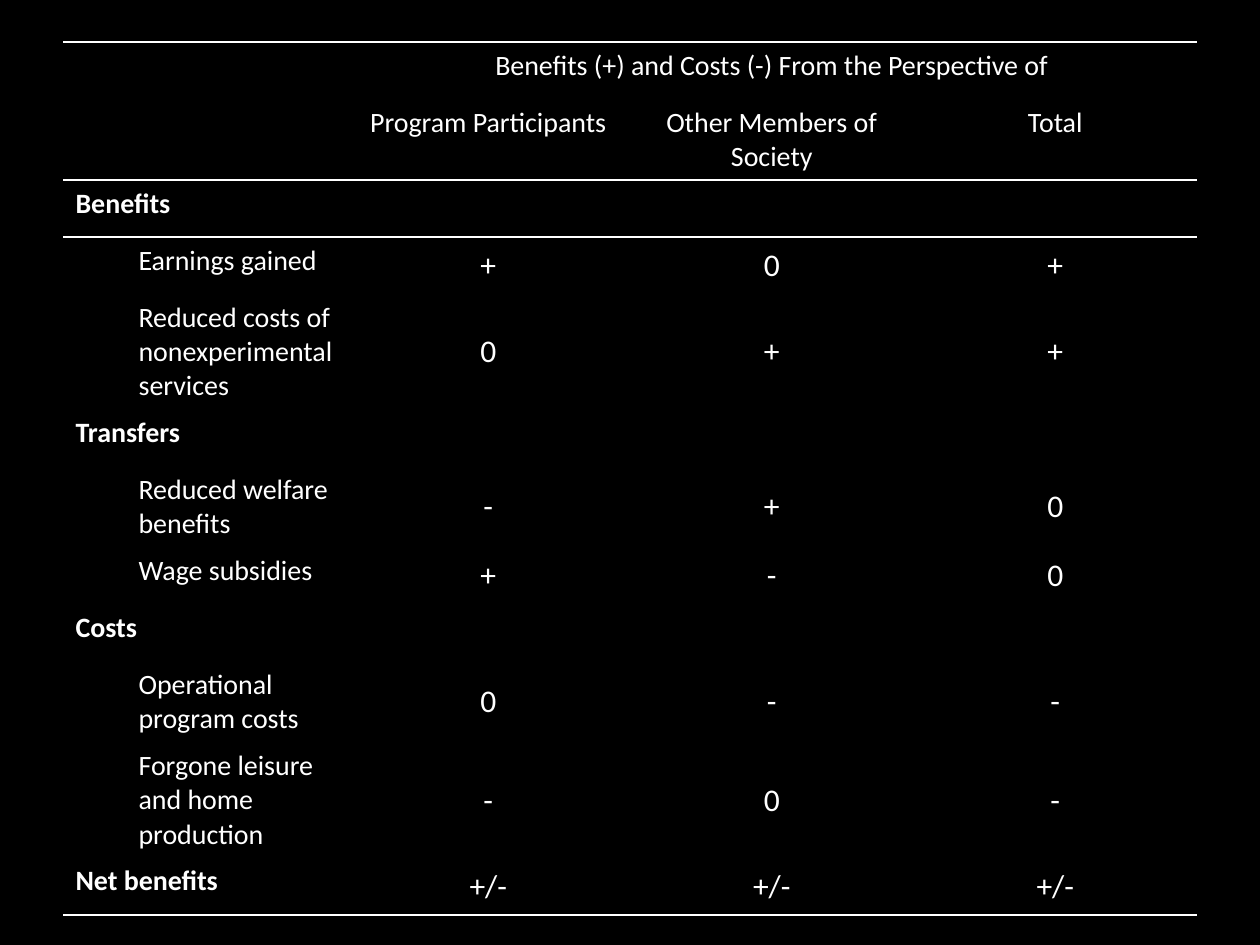
from lxml.etree import SubElement
from pptx import Presentation
from pptx.dml.color import RGBColor
from pptx.enum.text import MSO_ANCHOR, PP_ALIGN
from pptx.oxml import parse_xml
from pptx.oxml.ns import nsdecls
from pptx.util import Pt

COLORS = {"background": "000000", "ink": "FFFFFF"}
FONT = "Calibri"
PX_PER_INCH = 126
NO_STYLE_NO_GRID = "{2D5ABB26-0587-4C30-8999-92F81FD0307C}"

COLUMN_WIDTH = 283.5
ROW_HEIGHTS = [57, 78, 57, 57, 112, 57, 78, 57, 57, 78, 78, 57]
INDENT = 63

PERSPECTIVES = ["Program Participants", "Other Members of Society", "Total"]
# Label, then one sign per perspective; a section heading has no signs
ROWS = [
    ("Benefits", ""),
    ("Earnings gained", "+ 0 +"),
    ("Reduced costs of nonexperimental services", "0 + +"),
    ("Transfers", ""),
    ("Reduced welfare benefits", "- + 0"),
    ("Wage subsidies", "+ - 0"),
    ("Costs", ""),
    ("Operational program costs", "0 - -"),
    ("Forgone leisure and home production", "- 0 -"),
    ("Net benefits", "+/- +/- +/-"),
]
BOLD_LABELS = {"Benefits", "Transfers", "Costs", "Net benefits"}


def px(length):
    return round(length * 914400 / PX_PER_INCH)


def write_cell(cell, text, size=16, bold=False, align=PP_ALIGN.CENTER):
    cell.text_frame.text = text
    paragraph = cell.text_frame.paragraphs[0]
    paragraph.alignment = align
    font = paragraph.runs[0].font
    font.name, font.size, font.bold = FONT, Pt(size), bold
    font.color.rgb = RGBColor.from_string(COLORS["ink"])


def write_label(cell, text):
    bold = text in BOLD_LABELS
    write_cell(cell, text, bold=bold, align=PP_ALIGN.LEFT)
    if not bold:
        paragraph = cell.text_frame.paragraphs[0]
        paragraph.level = 1
        properties = paragraph._p.get_or_add_pPr()
        properties.set("marL", str(px(INDENT)))
        properties.set("indent", "0")


def rule_row(table, row, side):
    """Draw a one-point line along the top (T) or bottom (B) of a row."""
    for cell in table.rows[row].cells:
        line = parse_xml(f'<a:ln{side} {nsdecls("a")} w="{Pt(1)}"><a:solidFill>'
                         f'<a:srgbClr val="{COLORS["ink"]}"/></a:solidFill></a:ln{side}>')
        cell._tc.get_or_add_tcPr().insert(0, line)


def add_plain_table(slide):
    columns = len(PERSPECTIVES) + 1
    frame = slide.shapes.add_table(len(ROW_HEIGHTS), columns, px(63), px(42),
                                   px(COLUMN_WIDTH * columns), px(sum(ROW_HEIGHTS)))
    table = frame.table
    table.first_row = table.horz_banding = False
    table._tbl.tblPr[0].text = NO_STYLE_NO_GRID
    for row, height in zip(table.rows, ROW_HEIGHTS):
        row.height = px(height)
    for cell in table.iter_cells():
        cell.fill.background()
    return table


def main():
    presentation = Presentation()
    presentation.slide_width, presentation.slide_height = px(1260), px(945)
    slide = presentation.slides.add_slide(presentation.slide_layouts[6])
    slide.background.fill.solid()
    slide.background.fill.fore_color.rgb = RGBColor.from_string(COLORS["background"])
    table = add_plain_table(slide)

    # Two header rows
    table.cell(0, 1).merge(table.cell(0, 3))
    write_cell(table.cell(0, 1), "Benefits (+) and Costs (-) From the Perspective of")
    for column, name in enumerate(PERSPECTIVES, start=1):
        write_cell(table.cell(1, column), name)

    # Body: labels and signs
    for row, (label, signs) in enumerate(ROWS, start=2):
        write_label(table.cell(row, 0), label)
        for column, sign in enumerate(signs.split(), start=1):
            cell = table.cell(row, column)
            write_cell(cell, sign, size=18)
            cell.vertical_anchor = MSO_ANCHOR.MIDDLE

    # Horizontal rules
    for row, side in [(0, "T"), (1, "B"), (2, "T"), (len(ROW_HEIGHTS) - 1, "B")]:
        rule_row(table, row, side)

    presentation.save("out.pptx")


if __name__ == "__main__":
    main()
